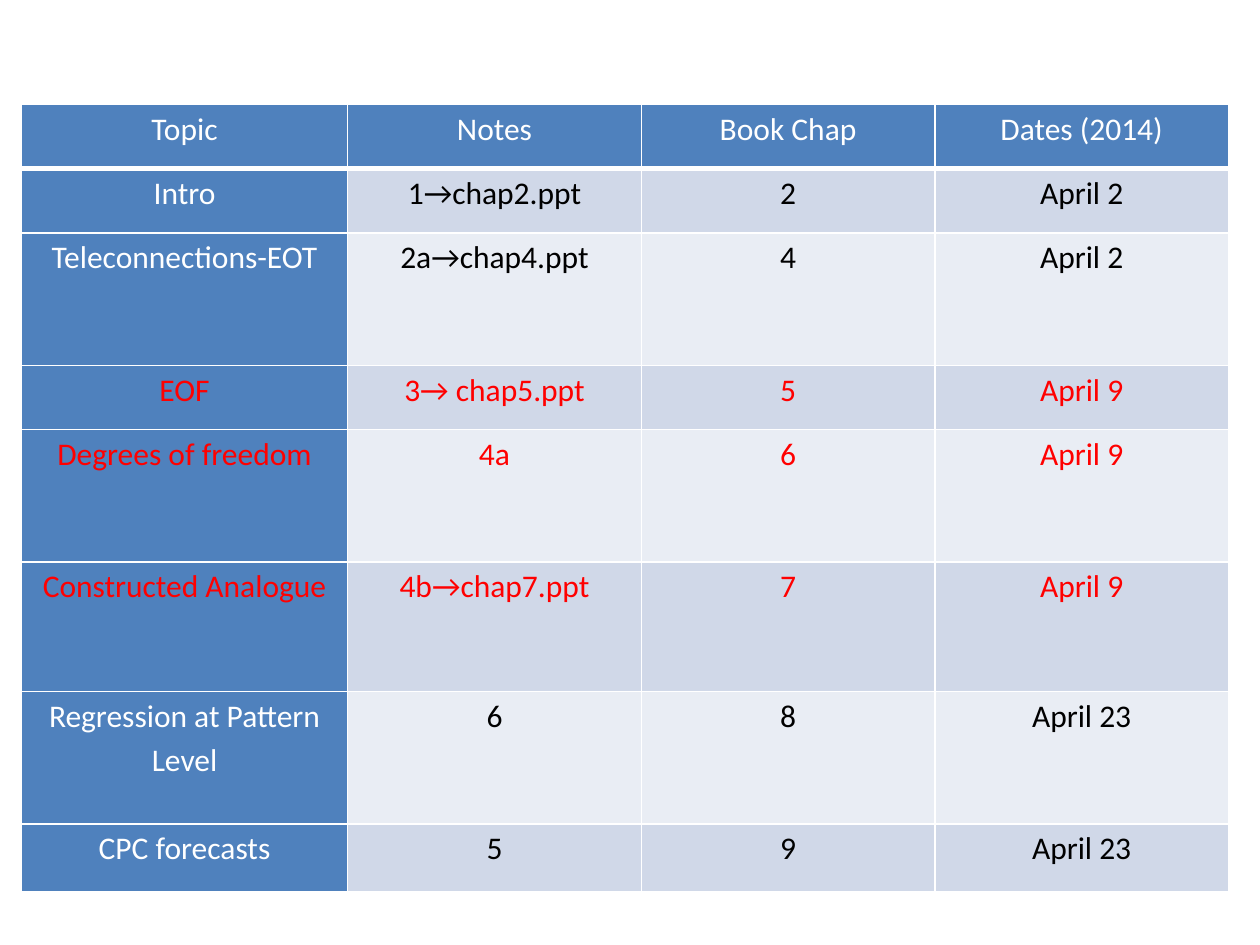
from lxml import etree
from pptx import Presentation, util as u
from pptx.dml.color import RGBColor
from pptx.enum import text
from pptx.oxml.ns import qn

COLORS = {"blue": "4F81BD", "band": "D0D8E8", "light": "E9EDF4",
          "white": "FFFFFF", "black": "000000", "red": "FF0000"}
WIDTH, HEIGHT = 10, 7.5


class SlideBuilder:
    """Holds the table style and the current slide."""
    font, size, line_spacing = "Calibri", 18, 1.15
    side_margin = 0.07

    def __init__(self, prs):
        self.s = prs.slides.add_slide(prs.slide_layouts[6])

    def color(self, name):
        return RGBColor.from_string(COLORS[name])

    def borders(self, cell, bottom):
        tc_pr = cell._tc.get_or_add_tcPr()
        for side, width in zip("LRTB", (1, 1, 1, bottom)):
            ln = etree.SubElement(tc_pr, qn(f"a:ln{side}"), w=str(u.Pt(width)))
            fill = etree.SubElement(ln, qn("a:solidFill"))
            etree.SubElement(fill, qn("a:srgbClr"), val=COLORS["white"])

    def cell(self, cell, value, fill, ink, bottom=1):
        self.borders(cell, bottom)
        cell.fill.solid()
        cell.fill.fore_color.rgb = self.color(fill)
        cell.margin_left = cell.margin_right = u.Inches(self.side_margin)
        cell.margin_top = cell.margin_bottom = 0
        cell.text_frame.text = value
        p = cell.text_frame.paragraphs[0]
        p.alignment = text.PP_ALIGN.CENTER
        p.line_spacing = self.line_spacing
        font = p.runs[0].font
        font.name, font.size, font.bold = self.font, u.Pt(self.size), False
        font.color.rgb = self.color(ink)

    def table(self, left, top, widths, heights, rows, red_rows):
        box = [u.Inches(v) for v in (left, top, sum(widths), sum(heights))]
        tbl = self.s.shapes.add_table(len(rows), len(widths), *box).table
        for col, width in zip(tbl.columns, widths):
            col.width = u.Inches(width)
        for i, (row, height) in enumerate(zip(rows, heights)):
            tbl.rows[i].height = u.Inches(height)
            for j, value in enumerate(row):
                heading = i == 0 or j == 0
                fill = "blue" if heading else "band" if i % 2 else "light"
                ink = "red" if i in red_rows else "white" if heading else "black"
                self.cell(tbl.cell(i, j), value, fill, ink, bottom=1 if i else 3)


def main():
    prs = Presentation()
    prs.slide_width, prs.slide_height = u.Inches(WIDTH), u.Inches(HEIGHT)
    slide = SlideBuilder(prs)

    # Course schedule, with the April 9 session in red
    schedule = [
        ("Topic", "Notes", "Book Chap", "Dates (2014)"),
        ("Intro", "1→chap2.ppt", "2", "April 2"),
        ("Teleconnections-EOT", "2a→chap4.ppt", "4", "April 2"),
        ("EOF", "3→ chap5.ppt", "5", "April 9"),
        ("Degrees of freedom", "4a", "6", "April 9"),
        ("Constructed Analogue", "4b→chap7.ppt", "7", "April 9"),
        ("Regression at Pattern Level", "6", "8", "April 23"),
        ("CPC forecasts", "5", "9", "April 23"),
    ]
    red_rows = {i for i, row in enumerate(schedule) if row[-1] == "April 9"}
    single, tall = 0.51, 1.05
    heights = [single, single, tall, single, tall, 1.03, tall, 0.54]
    slide.table(0.17, 0.83, [2.59] + [2.33] * 3, heights, schedule, red_rows)

    prs.save("out.pptx")


if __name__ == "__main__":
    main()
